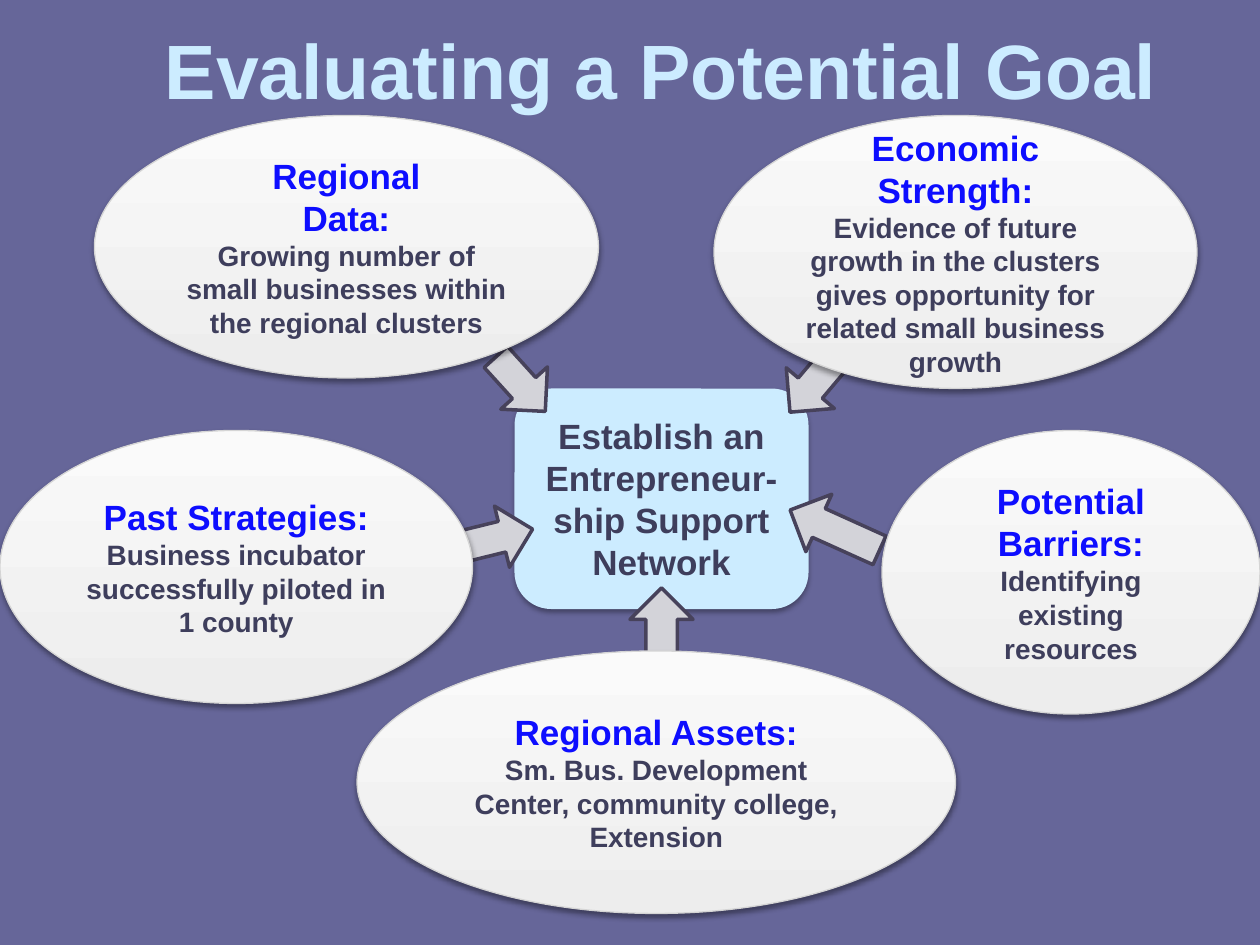
"""Build the goal evaluation slide: five ovals of evidence around one goal."""
from lxml import etree
from pptx import Presentation
from pptx.dml.color import RGBColor
from pptx.enum import shapes, text
from pptx.oxml import ns
from pptx.util import Pt

BACKGROUND = RGBColor(0x66, 0x66, 0x99)
PALE_BLUE = RGBColor(0xCC, 0xEC, 0xFF)
INK = RGBColor(0x3E, 0x3E, 0x5C)
HEADING = RGBColor(0x0D, 0x0D, 0xFF)
ARROW_FILL = RGBColor(0xD3, 0xD3, 0xD9)
ARROW_LINE = RGBColor(0x47, 0x42, 0x5B)
OVAL_BOTTOM = RGBColor(0xED, 0xED, 0xED)
OVAL_TOP = RGBColor(0xFA, 0xFA, 0xFA)
OVAL_LINE = RGBColor(0xD5, 0xD5, 0xD5)

ARROWS = [
    (449, 285, 56, 24.3),
    (258, 290, 47, 166.2),
    (276.5, 201.5, 42, 227.8),
    (357, 339, 42, 90),
    (444, 201.5, 42, 310.2),
]
OVALS = [
    (0, 246, 270, 156, "Past Strategies:",
     "Business incubator successfully piloted in 1 county"),
    (204, 372, 342, 150, "Regional Assets:",
     "Sm. Bus. Development Center, community college, Extension"),
    (408, 66, 276, 156, "Economic Strength:",
     "Evidence of future growth in the clusters gives opportunity "
     "for related small business growth"),
    (504, 246, 216, 162, "Potential Barriers:",
     "Identifying existing resources"),
    (54, 66, 288, 150, "Regional\nData:",
     "Growing number of small businesses within the regional clusters"),
]


class GoalSlide:
    """Hold the style and the current slide."""

    font = "Arial"
    heading_size = 20
    detail_size = 16

    def __init__(self, slide):
        self.slide = slide
        slide.background.fill.solid()
        slide.background.fill.fore_color.rgb = BACKGROUND

    def format_paragraph(self, paragraph, size, color):
        paragraph.alignment = text.PP_ALIGN.CENTER
        for run in paragraph.runs:
            run.font.name = self.font
            run.font.size = Pt(size)
            run.font.bold = True
            run.font.color.rgb = color

    def add_shape(self, kind, left, top, width, height):
        shape = self.slide.shapes.add_shape(
            kind, Pt(left), Pt(top), Pt(width), Pt(height))
        shape.shadow.inherit = False
        return shape

    def add_shadow(self, shape, opacity):
        effects = shape._element.spPr.find(ns.qn("a:effectLst"))
        shadow = etree.SubElement(
            effects, ns.qn("a:outerShdw"), blurRad=str(Pt(3.1)),
            dist=str(Pt(1.8)), dir="5400000", rotWithShape="0")
        color = etree.SubElement(shadow, ns.qn("a:srgbClr"), val="000000")
        etree.SubElement(color, ns.qn("a:alpha"), val=str(opacity * 1000))

    def title(self, words, left, top, width, height):
        shape = self.slide.shapes.title
        shape.left, shape.top = Pt(left), Pt(top)
        shape.width, shape.height = Pt(width), Pt(height)
        frame = shape.text_frame
        frame.text = words
        frame.vertical_anchor = text.MSO_ANCHOR.MIDDLE
        self.format_paragraph(frame.paragraphs[0], 44, PALE_BLUE)

    def goal(self, words, left, top, width, height):
        shape = self.add_shape(
            shapes.MSO_SHAPE.ROUNDED_RECTANGLE, left, top, width, height)
        shape.fill.solid()
        shape.fill.fore_color.rgb = PALE_BLUE
        shape.line.fill.background()
        self.add_shadow(shape, 35)
        shape.text_frame.text = words
        self.format_paragraph(
            shape.text_frame.paragraphs[0], self.heading_size, INK)

    def arrow(self, left, top, width, rotation):
        shape = self.add_shape(
            shapes.MSO_SHAPE.LEFT_ARROW, left, top, width, 36)
        shape.rotation = rotation
        shape.fill.solid()
        shape.fill.fore_color.rgb = ARROW_FILL
        shape.line.color.rgb = ARROW_LINE
        shape.line.width = Pt(2)

    def oval(self, left, top, width, height, heading, detail):
        shape = self.add_shape(
            shapes.MSO_SHAPE.OVAL, left, top, width, height)
        shape.fill.gradient()
        shape.fill.gradient_angle = 90
        for stop, color in zip(shape.fill.gradient_stops,
                               (OVAL_BOTTOM, OVAL_TOP)):
            stop.color.rgb = color
        shape.line.color.rgb = OVAL_LINE
        shape.line.width = Pt(0.75)
        self.add_shadow(shape, 38)
        frame = shape.text_frame
        frame.text = f"{heading}\n{detail}"
        *heading_lines, detail_paragraph = frame.paragraphs
        for paragraph in heading_lines:
            self.format_paragraph(paragraph, self.heading_size, HEADING)
        self.format_paragraph(detail_paragraph, self.detail_size, INK)


def main():
    presentation = Presentation()
    presentation.slide_width, presentation.slide_height = Pt(720), Pt(540)
    slide = presentation.slides.add_slide(presentation.slide_layouts[5])
    page = GoalSlide(slide)
    page.title("Evaluating a Potential Goal", 60, 6, 636, 66)
    page.goal("Establish an Entrepreneur-ship Support Network",
              294, 222, 168, 126)
    for arrow in ARROWS:
        page.arrow(*arrow)
    for oval in OVALS:
        page.oval(*oval)
    presentation.save("out.pptx")


if __name__ == "__main__":
    main()
